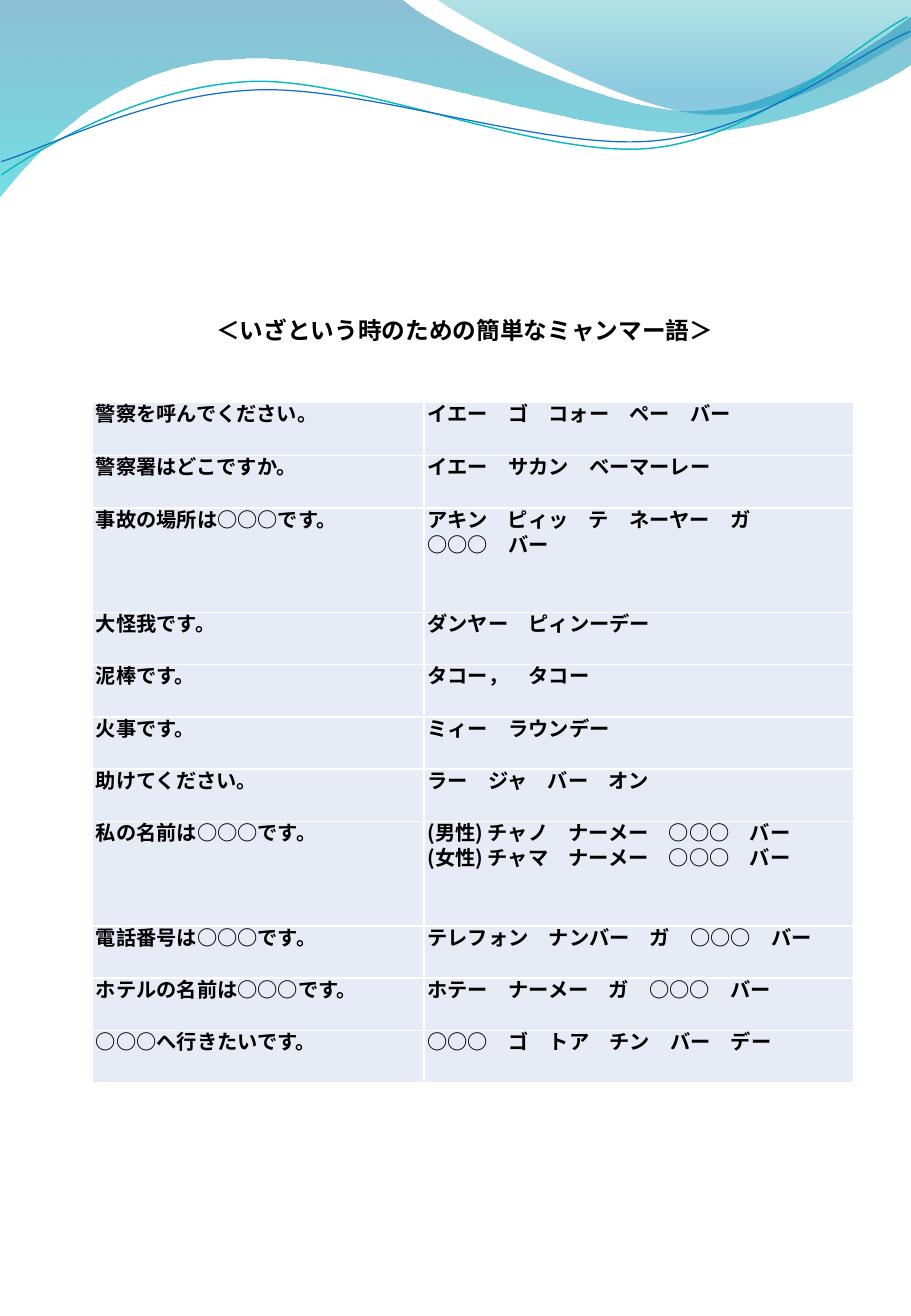
from lxml import etree
from pptx import Presentation
from pptx import util as u
from pptx.dml.color import RGBColor
from pptx.enum import text as t
from pptx.oxml import ns

FACE = "Noto Sans CJK JP"

deck = Presentation()
deck.slide_width, deck.slide_height = u.Inches(7.5), u.Inches(10.83)
slide = deck.slides.add_slide(deck.slide_layouts[5])


def rgb(code):
    return RGBColor.from_string(code)


def style(para, size):
    font = para.font
    font.size, font.bold, font.name = u.Pt(size), True, FACE
    font.color.rgb = rgb("000000")
    etree.SubElement(font._rPr, ns.qn("a:ea"), typeface=FACE)


# Wave outlines: a pair is a corner, six numbers are a Bézier curve
band = [(0, -0.01), (3.3, -0.01),
        (3.57, 0.24, 4.98, 0.91, 5.69, 0.91),
        (6.4, 0.91, 7.19, 0.37, 7.5, 0.13), (7.51, 0.52),
        (7.38, 0.63, 6.52, 1.09, 5.59, 1.09),
        (4.66, 1.08, 2.86, 0.4, 1.93, 0.49),
        (0.97, 0.51, 0.34, 1.2, -0.01, 1.63)]
crest = [(3.59, -0.01), (3.82, 0.16, 5.11, 0.89, 5.77, 0.94),
         (6.42, 1, 7.21, 0.46, 7.5, 0.3), (7.5, 0)]
teal = [(0.01, 1.44), (0.37, 1.2, 1.18, 0.71, 2.07, 0.67),
        (2.96, 0.64, 4.46, 1.31, 5.36, 1.22),
        (6.26, 1.13, 7.03, 0.37, 7.47, 0.14)]
blue = [(0.01, 1.33), (0.36, 1.23, 1.22, 0.77, 2.12, 0.74),
        (3.02, 0.71, 4.49, 1.24, 5.38, 1.16),
        (6.28, 1.08, 7.05, 0.44, 7.49, 0.26)]

# Each wave has gradient stops (position, colour, opacity) or a line
waves = [(band, [(0, "0074A1", 45), (1, "00C6CF", 55)], None),
         (crest, [(0, "00A1A9", 30), (0.8, "008BBF", 45)], None),
         (teal, None, ("0AB8BF", 0.85)),
         (blue, None, ("0F6FC6", 0.75))]
for outline, stops, line in waves:
    ends = [(u.Inches(part[-2]), u.Inches(part[-1])) for part in outline]
    pen = slide.shapes.build_freeform(*ends[0])
    pen.add_line_segments(ends[1:], close=bool(stops))
    wave = pen.convert_to_shape()
    wave.shadow.inherit = False
    # Bend the straight segments that have control points
    legs = list(wave._element.iter(ns.qn("a:lnTo")))
    for leg, part in zip(legs, outline[1:]):
        if len(part) == 6:
            leg.tag = ns.qn("a:cubicBezTo")
            for i in (0, 2):
                spot = etree.Element(ns.qn("a:pt"),
                                     x=str(u.Inches(part[i]) - wave.left),
                                     y=str(u.Inches(part[i + 1]) - wave.top))
                leg.insert(i // 2, spot)
    if stops:
        wave.line.fill.background()
        wave.fill.gradient()
        wave.fill.gradient_angle = 270
        for stop, (pos, code, alpha) in zip(wave.fill.gradient_stops, stops):
            stop.position = pos
            stop.color.rgb = rgb(code)
            tint = stop._gs.find(ns.qn("a:srgbClr"))
            etree.SubElement(tint, ns.qn("a:alpha"), val=str(alpha * 1000))
    else:
        wave.fill.background()
        wave.line.color.rgb = rgb(line[0])
        wave.line.width = u.Pt(line[1])

# Title
title = slide.shapes.title
title.left, title.top = u.Inches(0.99), u.Inches(0.85)
title.width, title.height = u.Inches(5.67), u.Inches(3.2)
frame = title.text_frame
frame.text = "＜いざという時のための簡単なミャンマー語＞"
frame.word_wrap = True
frame.auto_size = t.MSO_AUTO_SIZE.NONE
frame.vertical_anchor = t.MSO_ANCHOR.MIDDLE
frame.margin_left, frame.margin_top = u.Inches(0.79), u.Inches(0.59)
frame.paragraphs[0].alignment = t.PP_ALIGN.LEFT
style(frame.paragraphs[0], 14)

# Phrase table: Japanese, then Burmese in kana
phrases = [
    ("警察を呼んでください。", "イエー　ゴ　コォー　ペー　バー"),
    ("警察署はどこですか。", "イエー　サカン　ベーマーレー"),
    ("事故の場所は○○○です。", "アキン　ピィッ　テ　ネーヤー　ガ\n○○○　バー"),
    ("大怪我です。", "ダンヤー　ピィンーデー"),
    ("泥棒です。", "タコー，　タコー"),
    ("火事です。", "ミィー　ラウンデー"),
    ("助けてください。", "ラー　ジャ　バー　オン"),
    ("私の名前は○○○です。",
     "(男性) チャノ　ナーメー　○○○　バー\n(女性) チャマ　ナーメー　○○○　バー"),
    ("電話番号は○○○です。", "テレフォン　ナンバー　ガ　○○○　バー"),
    ("ホテルの名前は○○○です。", "ホテー　ナーメー　ガ　○○○　バー"),
    ("○○○へ行きたいです。", "○○○　ゴ　トア　チン　バー　デー"),
]
table = slide.shapes.add_table(len(phrases), 2, u.Inches(0.76), u.Inches(3.31),
                               u.Inches(6.27), u.Inches(5.6)).table
table.first_row = table.horz_banding = False
for col, width in zip(table.columns, (2.73, 3.54)):
    col.width = u.Inches(width)
for row, pair in zip(table.rows, phrases):
    row.height = u.Inches(0.43 * (1 + pair[1].count("\n")))
    for cell, words in zip(row.cells, pair):
        cell.text = words
        cell.margin_left = cell.margin_right = u.Inches(0.03)
        cell.margin_top = cell.margin_bottom = 0
        cell.fill.solid()
        cell.fill.fore_color.rgb = rgb("E7EBF5")
        for para in cell.text_frame.paragraphs:
            para.line_spacing = u.Pt(14.9)
            style(para, 12)
table.rows[0].height = u.Inches(0.44)

deck.save("out.pptx")
